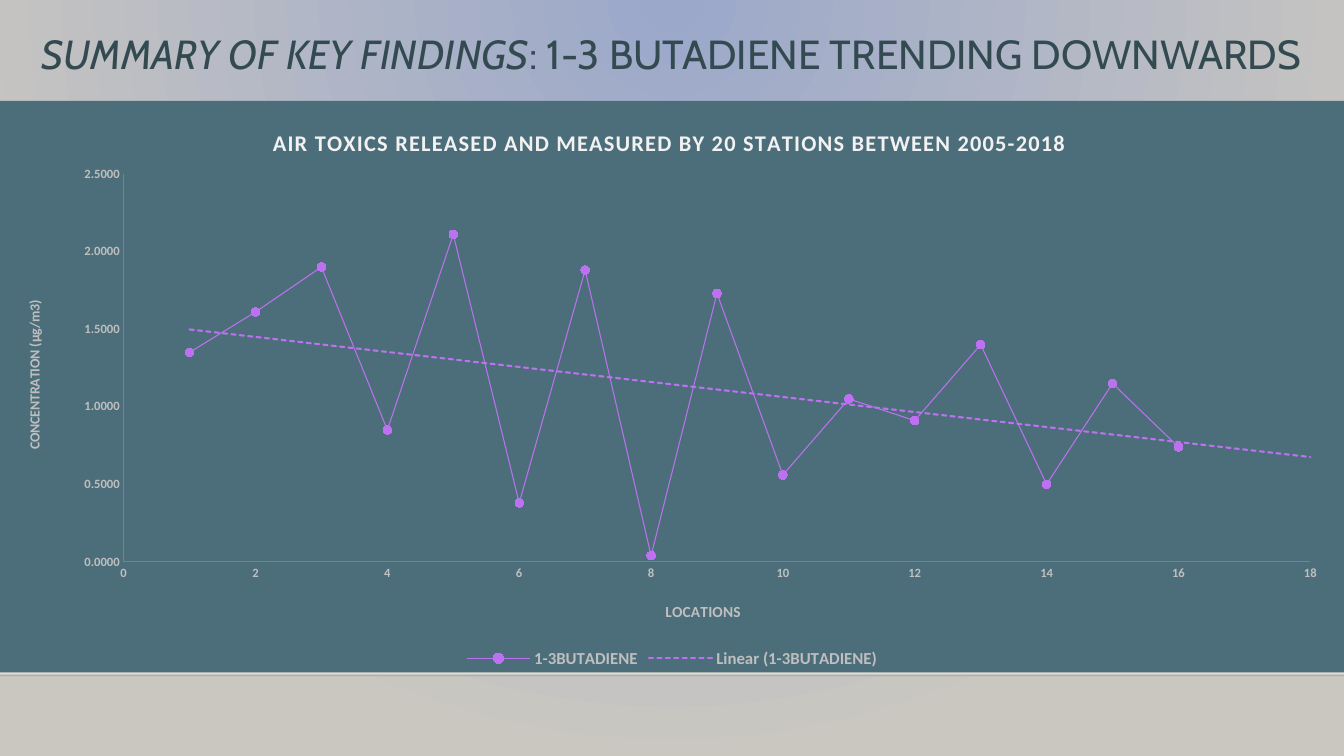
from pptx import Presentation
from pptx.chart.data import XyChartData
from pptx.dml.color import RGBColor
from pptx.enum.chart import XL_CHART_TYPE, XL_LEGEND_POSITION, XL_MARKER_STYLE, XL_TICK_MARK
from pptx.enum.dml import MSO_LINE
from pptx.enum.shapes import MSO_CONNECTOR, MSO_SHAPE
from pptx.enum.text import MSO_ANCHOR, PP_ALIGN
from pptx.oxml import parse_xml
from pptx.oxml.ns import nsdecls, qn
from pptx.util import Inches, Pt

SCATTER = XL_CHART_TYPE.XY_SCATTER_LINES
BOTTOM = XL_LEGEND_POSITION.BOTTOM
CIRCLE = XL_MARKER_STYLE.CIRCLE
NO_TICK = XL_TICK_MARK.NONE
SOLID = MSO_LINE.SOLID
STRAIGHT = MSO_CONNECTOR.STRAIGHT
RECTANGLE = MSO_SHAPE.RECTANGLE
MIDDLE = MSO_ANCHOR.MIDDLE
CENTER = PP_ALIGN.CENTER

BLUE_GLOW = RGBColor(0x9B, 0xA8, 0xCA)
STONE = RGBColor(0xCA, 0xC7, 0xC1)
WALL = RGBColor(0xDF, 0xDB, 0xD5)
NEAR_BLACK = RGBColor(0x00, 0x00, 0x01)
TITLE_INK = RGBColor(0x33, 0x4A, 0x51)
PANEL = RGBColor(0x4C, 0x6E, 0x7A)
CHART_TITLE = RGBColor(0xF2, 0xF2, 0xF2)
LABEL = RGBColor(0xBF, 0xBF, 0xBF)
AXIS = RGBColor(0x80, 0x80, 0x80)
PURPLE = RGBColor(0xBC, 0x72, 0xF0)
MARKER = RGBColor(0xB9, 0x5C, 0xFB)

WIDTH = 13.33
CONCENTRATIONS = [1.35, 1.61, 1.9, 0.85, 2.11, 0.38, 1.88, 0.04,
                  1.73, 0.56, 1.05, 0.91, 1.4, 0.5, 1.15, 0.74]


def set_font(font, size, color, name="Calibri", bold=False, italic=False):
    font.size, font.name = Pt(size), name
    font.bold, font.italic = bold, italic
    font.color.rgb = color


def add_text(para, text, **font_format):
    span = para.add_run()
    span.text = text
    set_font(span.font, **font_format)


def set_alpha(color_element, percent):
    color_element.append(parse_xml(f'<a:alpha {nsdecls("a")} val="{percent * 1000}"/>'))


def set_gradient(fill, *colors):
    fill.gradient()
    fill.gradient_angle = 270
    for stop, color in zip(fill.gradient_stops, colors):
        stop.color.rgb = color


def set_layout(parent, x, y, width=None, height=None):
    """Place a chart part by fractions of the chart's size."""
    target = '<c:layoutTarget val="inner"/>' if width else ""
    size = f'<c:w val="{width}"/><c:h val="{height}"/>' if width else ""
    layout = parse_xml(
        f'<c:layout {nsdecls("c")}><c:manualLayout>{target}<c:xMode val="edge"/>'
        f'<c:yMode val="edge"/><c:x val="{x}"/><c:y val="{y}"/>{size}'
        '</c:manualLayout></c:layout>')
    for automatic in parent.findall(qn("c:layout")):
        parent.remove(automatic)
    # The layout follows a title's text, and comes first in a plot area
    text = parent.find(qn("c:tx"))
    parent.insert(0 if text is None else parent.index(text) + 1, layout)


def add_backdrop(page, left, top, width, height):
    # Radial glow from the top centre
    set_gradient(page.background.fill, BLUE_GLOW, STONE)
    linear = page.element.xpath(".//p:bg//a:lin")[0]
    linear.getparent().replace(linear, parse_xml(
        f'<a:path {nsdecls("a")} path="circle">'
        '<a:fillToRect l="43000" t="0" r="43000" b="100000"/></a:path>'))

    # Wall fading in downwards
    wall = page.shapes.add_shape(
        RECTANGLE, Inches(left), Inches(top), Inches(width), Inches(height))
    wall.shadow.inherit = False
    wall.line.fill.background()
    set_gradient(wall.fill, WALL, WALL)
    set_alpha(wall.element.xpath("./p:spPr//a:srgbClr")[0], 0)

    # Faint floor line
    floor = Inches(top + height)
    edge = page.shapes.add_connector(
        STRAIGHT, Inches(left), floor, Inches(left + width), floor)
    edge.line.width = Pt(1)
    edge.line.color.rgb = NEAR_BLACK
    edge.line.dash_style = SOLID
    set_alpha(edge.element.xpath(".//a:ln//a:srgbClr")[0], 20)
    edge.element.spPr.append(parse_xml(f'<a:effectLst {nsdecls("a")}/>'))


def add_heading(page, left, top, width, height):
    box = page.shapes.add_textbox(Inches(left), Inches(top), Inches(width), Inches(height))
    frame = box.text_frame
    frame.word_wrap = True
    frame.vertical_anchor = MIDDLE
    para = frame.paragraphs[0]
    para.alignment = CENTER
    para.line_spacing = 0.9
    style = {"size": 29, "color": TITLE_INK, "name": "Cabin"}
    add_text(para, "SUMMARY OF KEY FINDINGS", italic=True, **style)
    add_text(para, ": 1-3 BUTADIENE TRENDING DOWNWARDS", **style)


def format_axis(axis, title, title_size, title_place, maximum, step, number_format):
    axis.minimum_scale, axis.maximum_scale, axis.major_unit = 0, maximum, step
    axis.has_major_gridlines = False
    axis.major_tick_mark = axis.minor_tick_mark = NO_TICK
    axis.tick_labels.number_format = number_format
    axis.tick_labels.number_format_is_linked = False
    set_font(axis.tick_labels.font, 9, LABEL, bold=True)
    axis.format.line.color.rgb = AXIS
    axis.format.line.width = Pt(0.75)
    add_text(axis.axis_title.text_frame.paragraphs[0], title,
             size=title_size, color=LABEL, bold=True)
    set_layout(axis.axis_title.element, *title_place)


def add_trend_chart(page, left, top, width, height):
    data = XyChartData()
    points = data.add_series("1-3BUTADIENE")
    for location, concentration in enumerate(CONCENTRATIONS, 1):
        points.add_data_point(location, concentration)
    chart = page.shapes.add_chart(
        SCATTER, Inches(left), Inches(top), Inches(width), Inches(height), data).chart
    set_font(chart.font, 10, LABEL)

    # Panel and plot area
    chart.element.find(qn("c:chart")).addnext(parse_xml(
        f'<c:spPr {nsdecls("c", "a")}><a:solidFill><a:srgbClr val="{PANEL}"/></a:solidFill>'
        '<a:ln><a:noFill/></a:ln></c:spPr>'))
    set_layout(chart.element.xpath(".//c:plotArea")[0], 0.092, 0.128, 0.883, 0.679)

    # Title
    chart.has_title = True
    title = chart.chart_title
    add_text(title.text_frame.paragraphs[0],
             "AIR TOXICS RELEASED AND MEASURED BY 20 STATIONS BETWEEN 2005-2018",
             size=16, color=CHART_TITLE, bold=True)
    title.element.xpath(".//a:r/a:rPr")[0].set("spc", "100")
    set_layout(title.element, 0.2, 0.04)

    # Axes
    format_axis(chart.category_axis, "LOCATIONS", 11, (0.493, 0.87), 18, 2, "General")
    format_axis(chart.value_axis, "CONCENTRATION (µg/m3)", 10, (0.017, 0.345),
                2.5, 0.5, "0.0000")
    turned = chart.value_axis.axis_title.element.xpath(".//a:bodyPr")[0]
    turned.set("rot", "-5400000")
    turned.set("vert", "horz")

    # Legend
    chart.has_legend = True
    chart.legend.position = BOTTOM
    chart.legend.include_in_layout = False
    set_font(chart.legend.font, 12, LABEL, bold=True)

    # Series and its linear trend, run on to the end of the axis
    chart.plots[0].vary_by_categories = False
    series = chart.plots[0].series[0]
    series.format.line.color.rgb = PURPLE
    series.format.line.width = Pt(0.75)
    series.marker.style = CIRCLE
    series.marker.size = 6
    series.marker.format.fill.solid()
    series.marker.format.fill.fore_color.rgb = MARKER
    series.marker.format.line.color.rgb = PURPLE
    chart.element.xpath(".//c:xVal")[0].addprevious(parse_xml(
        f'<c:trendline {nsdecls("c", "a")}><c:spPr><a:ln w="{Pt(1.5)}" cap="rnd"><a:solidFill>'
        f'<a:srgbClr val="{PURPLE}"/></a:solidFill><a:prstDash val="sysDash"/></a:ln></c:spPr>'
        '<c:trendlineType val="linear"/><c:forward val="2"/>'
        '<c:dispRSqr val="0"/><c:dispEq val="0"/></c:trendline>'))


def main():
    deck = Presentation()
    deck.slide_width, deck.slide_height = Inches(WIDTH), Inches(7.5)
    page = deck.slides.add_slide(deck.slide_layouts[6])
    add_backdrop(page, 0, 2.21, WIDTH, 4.49)
    add_heading(page, 0, 0.12, WIDTH, 0.88)
    add_trend_chart(page, 0, 1, WIDTH, 5.67)
    deck.save("out.pptx")


if __name__ == "__main__":
    main()
